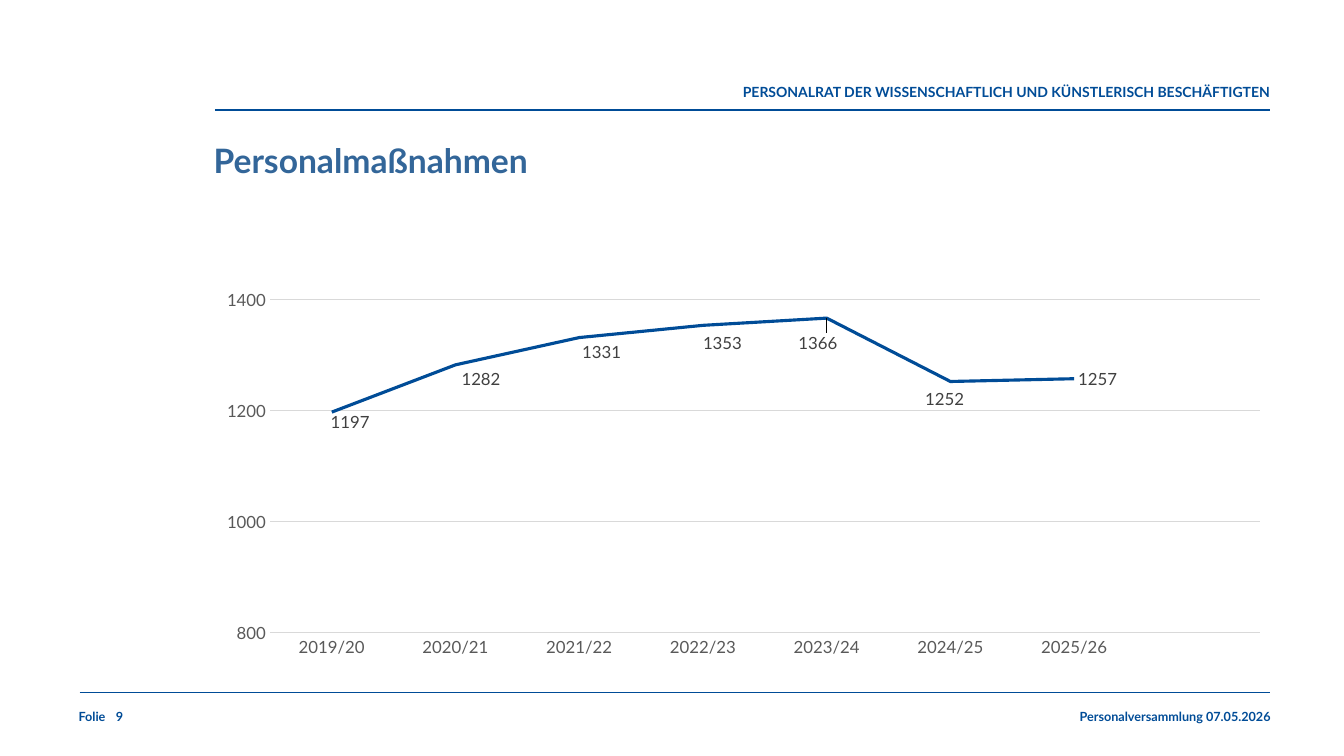
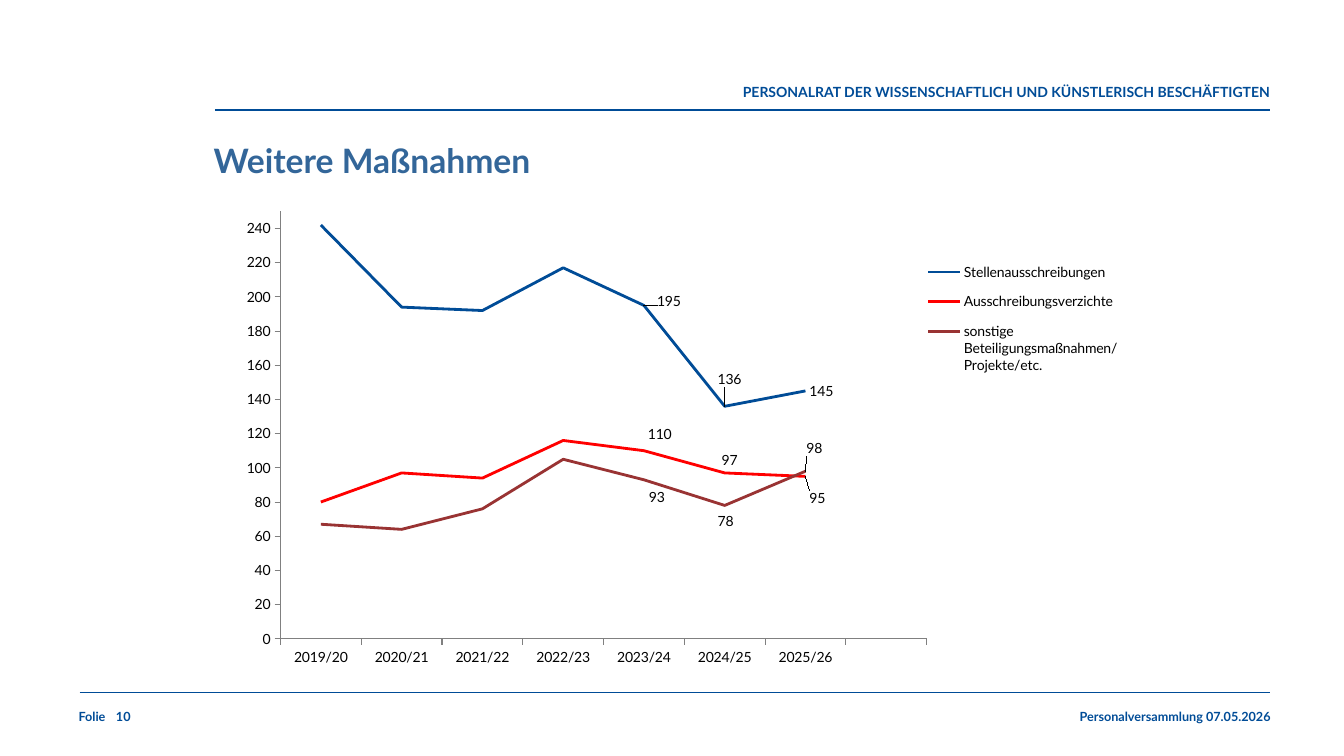
from lxml.etree import SubElement
from pptx import Presentation
from pptx.chart.data import CategoryChartData as Data
from pptx.dml.color import RGBColor as Rgb
from pptx.enum.chart import XL_CHART_TYPE as Kind, XL_LABEL_POSITION as Spot
from pptx.enum.chart import XL_LEGEND_POSITION as Corner, XL_TICK_MARK as Tick
from pptx.enum.shapes import MSO_CONNECTOR as Conn
from pptx.enum.text import PP_ALIGN as Align
from pptx.oxml.ns import qn
from pptx.util import Pt

PX = 9144  # 100 px to the inch
FONT = "Lato"
HEX = {"blue": "004C97", "title": "336699", "red": "FF0000", "brown": "993333",
       "black": "000000", "dark": "404040", "text": "595959",
       "grid": "D9D9D9", "axis": "808080"}


def style(font, size, color, bold=False):
    font.name, font.size, font.bold = FONT, Pt(size), bold
    font.color.rgb = Rgb.from_string(HEX[color])


def layout(parent, index, **values):
    """Give a chart part a manual layout, as its child at index."""
    for old in parent.findall(qn("c:layout")):
        parent.remove(old)
    node = parent.makeelement(qn("c:layout"))
    parent.insert(index, node)
    manual = SubElement(node, qn("c:manualLayout"))
    for name, value in values.items():
        SubElement(manual, qn("c:" + name)).set("val", str(value))


YEARS = [f"20{y}/{y + 1}" for y in range(19, 26)]

# Series: name, color, values, label shifts in px by point number
SLIDES = [
    {"no": 9, "title": "Personalmaßnahmen", "box": (210, 228, 1050, 430),
     "plot": (0.055, 0.032, 0.935, 0.898), "scale": (800, 1500, 200),
     "size": 12, "text": "text", "label": "dark", "axis": "grid",
     "width": 2.25, "grid": True,
     "series": [
         ("Series 1", "blue", [1197, 1282, 1331, 1353, 1366, 1252, 1257],
          {0: (-5, 10), 1: (2, 14), 2: (-1, 14), 3: (-4, 17), 4: (-32, 24),
           5: (-29, 17), 6: (0, 0)})]},
    {"no": 10, "title": "Weitere Maßnahmen", "box": (210, 201, 1049, 465),
     "plot": (0.065, 0.019, 0.611, 0.912), "scale": (0, 250, 20),
     "size": 10, "text": "black", "label": "black", "axis": "axis",
     "width": 2, "grid": False,
     "series": [
         ("Stellenausschreibungen", "blue",
          [242, 194, 192, 217, 195, 136, 145],
          {4: (9, -4), 5: (-11, -27), 6: (0, 0)}),
         ("Ausschreibungsverzichte", "red",
          [80, 97, 94, 116, 110, 97, 95],
          {4: (0, -16), 5: (-7, -13), 6: (0, 22)}),
         ("sonstige Beteiligungsmaßnahmen/Projekte/etc.", "brown",
          [67, 64, 76, 105, 93, 78, 98],
          {4: (1, 17), 5: (-11, 16), 6: (-3, -23)})]},
]
RULES = [(213, 109), (79, 687)]
RIGHT = 1260

prs = Presentation()
prs.slide_width, prs.slide_height = 1333 * PX, 750 * PX

for page in SLIDES:
    slide = prs.slides.add_slide(prs.slide_layouts[6])

    for left, top in RULES:
        rule = slide.shapes.add_connector(
            Conn.STRAIGHT, left * PX, top * PX, RIGHT * PX, top * PX)
        rule.line.color.rgb = Rgb.from_string(HEX["blue"])
        rule.line.width = Pt(1)
        SubElement(rule._element.spPr, qn("a:effectLst"))

    # Text, box, inset, size, color, alignment
    texts = [
        ("Folie", (78, 703, 47, 26), 0, 9, "blue", Align.LEFT),
        ("Personalversammlung 07.05.2026", (397, 703, 863, 26), 0, 9, "blue",
         Align.RIGHT),
        (str(page["no"]), (115, 703, 61, 26), 0, 9, "blue", Align.LEFT),
        ("PERSONALRAT DER WISSENSCHAFTLICH UND KÜNSTLERISCH BESCHÄFTIGTEN",
         (667, 83, 592, 24), 0, 10, "blue", Align.RIGHT),
        (page["title"], (202, 134, 1056, 50), 10, 24, "title", Align.LEFT),
    ]
    for text, box, inset, size, color, align in texts:
        frame = slide.shapes.add_textbox(*(n * PX for n in box)).text_frame
        frame.word_wrap = True
        frame.margin_left = frame.margin_right = inset * PX
        frame.margin_top = frame.margin_bottom = inset // 2 * PX
        frame.text = text
        para = frame.paragraphs[0]
        para.alignment = align
        style(para.runs[0].font, size, color, True)

    # The empty last category leaves room on the right
    data = Data()
    data.categories = YEARS + [""]
    for name, _, values, _ in page["series"]:
        data.add_series(name, values + [None])
    box = page["box"]
    chart = slide.shapes.add_chart(
        Kind.LINE, *(n * PX for n in box), data).chart
    chart.has_title = False
    style(chart.font, 10, "black")
    area = chart._chartSpace.chart.plotArea
    x, y, w, h = page["plot"]
    layout(area, 0, layoutTarget="inner", xMode="edge", yMode="edge",
           x=x, y=y, w=w, h=h)

    cats, vals = chart.category_axis, chart.value_axis
    for axis in (cats, vals):
        axis.major_tick_mark = Tick.NONE if page["grid"] else Tick.OUTSIDE
        axis.minor_tick_mark = Tick.NONE
        style(axis.tick_labels.font, page["size"], page["text"])
        axis.format.line.color.rgb = Rgb.from_string(HEX[page["axis"]])
        axis.format.line.width = Pt(0.75)
    vals.minimum_scale, vals.maximum_scale, vals.major_unit = page["scale"]
    vals.has_major_gridlines = page["grid"]
    if page["grid"]:
        vals.format.line.fill.background()
        grid = vals.major_gridlines.format.line
        grid.color.rgb = Rgb.from_string(HEX["grid"])
        grid.width = Pt(0.75)

    plot = chart.plots[0]
    plot.vary_by_categories = False
    for line, (_, color, _, shifts) in zip(plot.series, page["series"]):
        line.smooth = False
        line.format.line.color.rgb = Rgb.from_string(HEX[color])
        line.format.line.width = Pt(page["width"])
        line.data_labels.show_value = False
        for lead in list(line._element.iter(qn("c:showLeaderLines"))):
            lead.getparent().remove(lead)
        for index, (dx, dy) in shifts.items():
            label = line.points[index].data_label
            style(label.font, page["size"], page["label"])
            label.position = Spot.RIGHT
            if dx or dy:
                node = line._element.dLbls.get_dLbl_for_point(index)
                layout(node, 1, x=round(dx / box[2], 4),
                       y=round(dy / box[3], 4))

    chart.has_legend = len(page["series"]) > 1
    if chart.has_legend:
        legend = chart.legend
        legend.position = Corner.CORNER
        legend.include_in_layout = True
        style(legend.font, 10, "black")
        layout(legend._element, 1, xMode="edge", yMode="edge",
               x=0.667, y=0.103, w=0.25, h=0.253)

prs.save("out.pptx")
